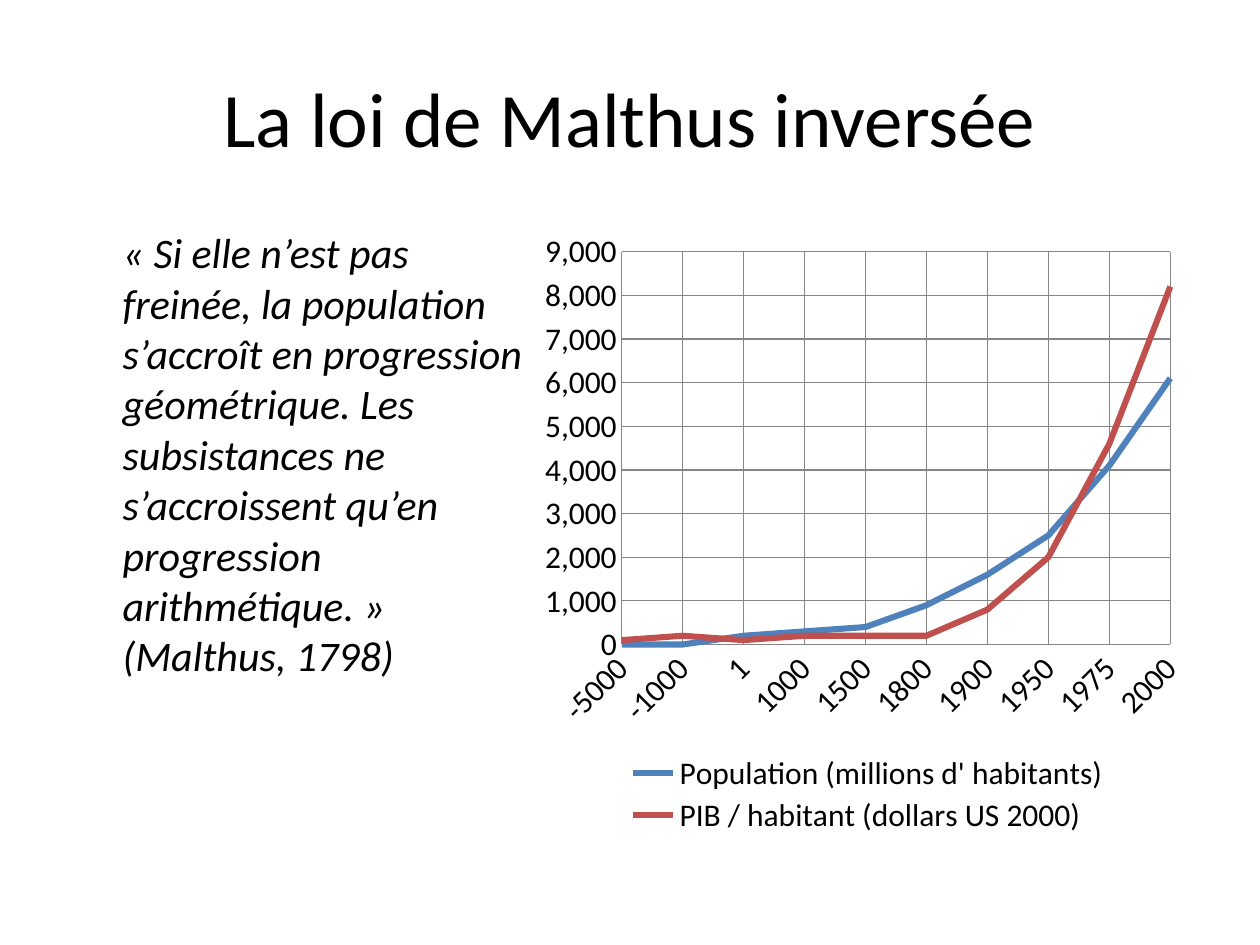
import pptx
import pptx.chart.data
import pptx.dml.color
import pptx.enum.chart
import pptx.enum.text
import pptx.oxml
import pptx.oxml.ns
import pptx.util
from dataclasses import dataclass

Pt = pptx.util.Pt
qn = pptx.oxml.ns.qn


@dataclass(frozen=True)
class Theme:
    font: str = "Calibri"
    text: str = "000000"
    grid: str = "868686"
    series: tuple = ("4F81BD", "C0504D")
    title_size: int = 44
    quote_size: int = 24
    chart_size: int = 18


THEME = Theme()
TITLE = "La loi de Malthus inversée"
QUOTE = ("\t«\u00a0Si elle n’est pas freinée, la population s’accroît en progression "
         "géométrique. Les subsistances ne s’accroissent qu’en progression "
         "arithmétique.\u00a0» (Malthus, 1798)")
YEARS = ["-5000", "-1000", "1", "1000", "1500", "1800", "1900", "1950", "1975", "2000"]
SERIES = {
    "Population (millions d' habitants)":
        (0, 0, 200, 300, 400, 900, 1600, 2500, 4100, 6100),
    "PIB / habitant (dollars US 2000)":
        (100, 200, 100, 200, 200, 200, 800, 2000, 4600, 8200),
}


def apply(target, values):
    for name, value in values.items():
        setattr(target, name, value)


def color(value):
    return pptx.dml.color.RGBColor.from_string(value)


def format_font(font, size, **extra):
    apply(font, {"name": THEME.font, "size": Pt(size), **extra})
    font.color.rgb = color(THEME.text)


def place(shape, box):
    apply(shape, dict(zip(("left", "top", "width", "height"), map(Pt, box))))


def add_title(slide, box):
    title = slide.shapes.title
    place(title, box)
    title.text_frame.text = TITLE
    title.text_frame.vertical_anchor = pptx.enum.text.MSO_ANCHOR.MIDDLE
    paragraph = title.text_frame.paragraphs[0]
    paragraph.alignment = pptx.enum.text.PP_ALIGN.CENTER
    format_font(paragraph.runs[0].font, THEME.title_size)


def add_quote(slide, box):
    frame = slide.shapes.add_textbox(*map(Pt, box)).text_frame
    frame.word_wrap = True
    paragraph = frame.paragraphs[0]
    paragraph.space_before = Pt(4.8)
    properties = paragraph._p.get_or_add_pPr()
    properties.set("marL", str(Pt(27)))
    properties.set("indent", str(-Pt(27)))
    run = paragraph.add_run()
    run.text = QUOTE
    format_font(run.font, THEME.quote_size, italic=True)


def layout_xml(x, y, width, height, inner=False):
    target = '<c:layoutTarget val="inner"/>' if inner else ""
    return pptx.oxml.parse_xml(
        f'<c:layout {pptx.oxml.ns.nsdecls("c")}><c:manualLayout>{target}'
        '<c:xMode val="edge"/><c:yMode val="edge"/>'
        f'<c:x val="{x}"/><c:y val="{y}"/><c:w val="{width}"/><c:h val="{height}"/>'
        '</c:manualLayout></c:layout>')


def remove_children(element, tag):
    for child in element.findall(qn(tag)):
        element.remove(child)


def format_axis(axis):
    apply(axis, {
        "has_major_gridlines": True,
        "major_tick_mark": pptx.enum.chart.XL_TICK_MARK.NONE,
        "minor_tick_mark": pptx.enum.chart.XL_TICK_MARK.NONE,
    })
    format_font(axis.tick_labels.font, THEME.chart_size)
    for line in (axis.format.line, axis.major_gridlines.format.line):
        line.color.rgb = color(THEME.grid)
        line.width = Pt(0.75)


def add_growth_chart(slide, box):
    data = pptx.chart.data.CategoryChartData(number_format="#,##0")
    data.categories = YEARS
    for name, values in SERIES.items():
        data.add_series(name, values)
    chart = slide.shapes.add_chart(
        pptx.enum.chart.XL_CHART_TYPE.LINE, *map(Pt, box), data).chart
    apply(chart, {"has_title": False, "has_legend": True})
    format_font(chart.font, THEME.chart_size)
    chart.plots[0].vary_by_categories = False
    for series, value in zip(chart.plots[0].series, THEME.series):
        series.smooth = False
        series.format.line.color.rgb = color(value)
        series.format.line.width = Pt(3.5)

    for axis in (chart.category_axis, chart.value_axis):
        format_axis(axis)
    apply(chart.value_axis, {"minimum_scale": 0, "maximum_scale": 9000, "major_unit": 1000})
    apply(chart.value_axis.tick_labels,
          {"number_format": "#,##0", "number_format_is_linked": False})
    chart.category_axis._element.txPr.find(qn("a:bodyPr")).set("rot", "-2700000")
    value_axis = chart.value_axis._element
    remove_children(value_axis, "c:crossBetween")
    value_axis.find(qn("c:crosses")).addnext(pptx.oxml.parse_xml(
        f'<c:crossBetween {pptx.oxml.ns.nsdecls("c")} val="midCat"/>'))

    plot_area = chart._chartSpace.chart.plotArea
    remove_children(plot_area, "c:layout")
    plot_area.insert(0, layout_xml(0.135, 0.05, 0.825, 0.63, inner=True))

    legend = chart.legend
    apply(legend, {"position": pptx.enum.chart.XL_LEGEND_POSITION.BOTTOM,
                   "include_in_layout": False})
    format_font(legend.font, THEME.chart_size)
    remove_children(legend._element, "c:layout")
    legend._element.find(qn("c:legendPos")).addnext(layout_xml(0.14, 0.85, 0.73, 0.14))


def main():
    presentation = pptx.Presentation()
    apply(presentation, {"slide_width": Pt(720), "slide_height": Pt(540)})
    slide = presentation.slides.add_slide(presentation.slide_layouts[5])
    add_title(slide, (36, 21.6, 648, 90))
    add_growth_chart(slide, (304, 126, 380, 356.4))
    add_quote(slide, (36, 126, 273.6, 279.4))
    presentation.save("out.pptx")


if __name__ == "__main__":
    main()
